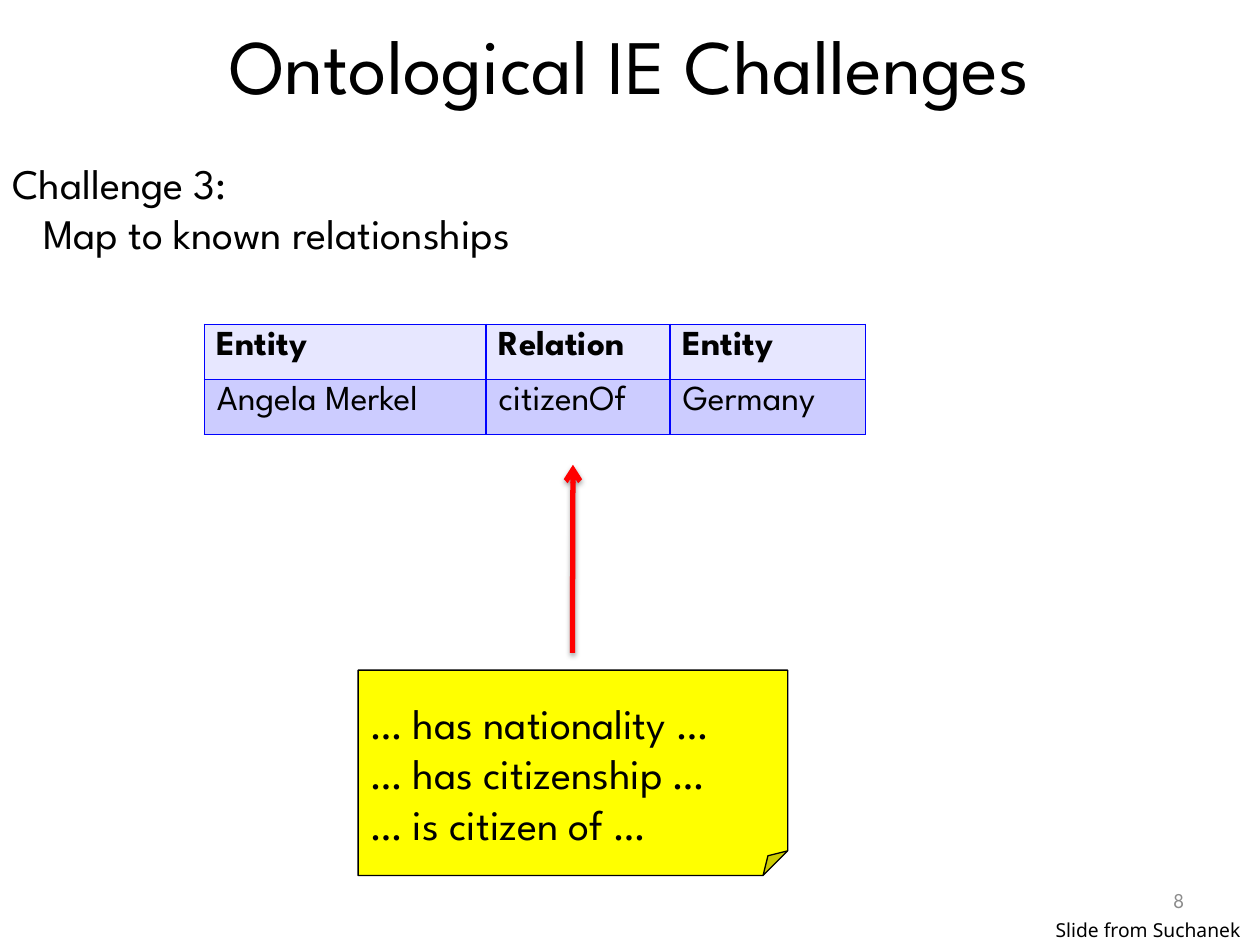
import dataclasses

import pptx
import pptx.dml.color
import pptx.enum.shapes
import pptx.enum.text
import pptx.oxml
import pptx.oxml.ns
import pptx.util

Cm = pptx.util.Cm
Pt = pptx.util.Pt
Align = pptx.enum.text.PP_ALIGN
Anchor = pptx.enum.text.MSO_ANCHOR
NS = pptx.oxml.ns.nsdecls("a")


@dataclasses.dataclass(frozen=True)
class Theme:
    font: str = "League Spartan"
    plain: str = "Noto Sans"
    black: str = "000000"
    grey: str = "8C8C8C"
    head: str = "E7E7FF"
    row: str = "CCCCFF"
    grid: str = "0001FF"
    red: str = "FF0000"
    note: str = "FFFF00"
    title: int = 44
    body: int = 24
    cell: int = 20
    page: int = 12
    source: int = 11


THEME = Theme()


def color(code):
    return pptx.dml.color.RGBColor.from_string(code)


def write(frame, text, size=THEME.body, font=THEME.font, ink=THEME.black,
          bold=False, align=Align.LEFT, anchor=Anchor.TOP, indent=0):
    """Fill a frame, one paragraph a line; indent moves the later lines."""
    frame.word_wrap = True
    frame.vertical_anchor = anchor
    for i, line in enumerate(text.split("\n")):
        para = frame.paragraphs[0] if i == 0 else frame.add_paragraph()
        para.alignment = align
        if i and indent:
            para._p.get_or_add_pPr().set("marL", str(Cm(indent)))
        run = para.add_run()
        run.text = line
        run.font.name = font
        run.font.size = Pt(size)
        run.font.bold = bold
        run.font.color.rgb = color(ink)


def label(slide, box, text, **style):
    shape = slide.shapes.add_textbox(*map(Cm, box))
    write(shape.text_frame, text, **style)


def border(cell):
    props = cell._tc.get_or_add_tcPr()
    for i, side in enumerate(("lnL", "lnR", "lnT", "lnB")):
        props.insert(i, pptx.oxml.parse_xml(
            f'<a:{side} {NS} w="{Pt(1)}"><a:solidFill>'
            f'<a:srgbClr val="{THEME.grid}"/></a:solidFill></a:{side}>'))


def table(slide, left, top, widths, height, rows):
    box = (left, top, sum(widths), height * len(rows))
    grid = slide.shapes.add_table(
        len(rows), len(widths), *map(Cm, box)).table
    for col, width in zip(grid.columns, widths):
        col.width = Cm(width)
    for r, texts in enumerate(rows):
        grid.rows[r].height = Cm(height)
        for c, text in enumerate(texts):
            cell = grid.cell(r, c)
            cell.fill.solid()
            cell.fill.fore_color.rgb = color(THEME.row if r else THEME.head)
            write(cell.text_frame, text, size=THEME.cell, bold=r == 0)
            border(cell)


def arrow(slide, start, end):
    line = slide.shapes.add_connector(
        pptx.enum.shapes.MSO_CONNECTOR.STRAIGHT, *map(Cm, start + end))
    line.line.color.rgb = color(THEME.red)
    line.line.width = Pt(3)
    line.line._get_or_add_ln().append(
        pptx.oxml.parse_xml(f'<a:tailEnd {NS} type="arrow"/>'))
    # Soft shadow straight below
    line._element.spPr.append(pptx.oxml.parse_xml(
        f'<a:effectLst {NS}><a:outerShdw blurRad="{Pt(3.1)}" '
        f'dist="{Pt(1.6)}" dir="5400000" rotWithShape="0">'
        f'<a:srgbClr val="{THEME.black}"><a:alpha val="38000"/></a:srgbClr>'
        '</a:outerShdw></a:effectLst>'))


def note(slide, box, text):
    shape = slide.shapes.add_shape(
        pptx.enum.shapes.MSO_SHAPE.FOLDED_CORNER, *map(Cm, box))
    # Size of the fold, which python-pptx does not list for this shape
    fold = shape._element.spPr.find(".//" + pptx.oxml.ns.qn("a:avLst"))
    fold.append(pptx.oxml.parse_xml(
        f'<a:gd {NS} name="adj" fmla="val 12000"/>'))
    shape.shadow.inherit = False
    shape.fill.solid()
    shape.fill.fore_color.rgb = color(THEME.note)
    shape.line.color.rgb = color(THEME.black)
    shape.line.width = Pt(0.75)
    frame = shape.text_frame
    frame.margin_left = frame.margin_right = Cm(0.25)
    frame.margin_top, frame.margin_bottom = Cm(0.5), 0
    write(frame, text, anchor=Anchor.MIDDLE)


def main():
    deck = pptx.Presentation()
    deck.slide_width, deck.slide_height = Cm(25.4), Cm(19.05)
    slide = deck.slides.add_slide(deck.slide_layouts[6])

    # Title and page number
    label(slide, (1.27, 0, 22.86, 2.57), "Ontological IE Challenges",
          size=THEME.title, align=Align.CENTER, anchor=Anchor.MIDDLE)
    label(slide, (18.2, 17.65, 5.93, 1.01), "8", size=THEME.page,
          ink=THEME.grey, align=Align.RIGHT, anchor=Anchor.MIDDLE)

    # Challenge
    label(slide, (0, 3.05, 25.4, 2.31),
          "Challenge 3:\nMap to known relationships", indent=0.62)

    # Known fact, and the phrases that map to it
    table(slide, 4.12, 6.54, (5.68, 3.71, 3.94), 1.11, [
        ("Entity", "Relation", "Entity"),
        ("Angela Merkel", "citizenOf", "Germany"),
    ])
    arrow(slide, (11.54, 13.16), (11.55, 9.37))
    note(slide, (7.22, 13.51, 8.66, 4.14),
         "… has nationality …\n… has citizenship …\n… is citizen of …")

    # Source line
    label(slide, (21.03, 18.39, 4.37, 0.74), "Slide from Suchanek",
          size=THEME.source, font=THEME.plain)

    deck.save("out.pptx")


if __name__ == "__main__":
    main()
